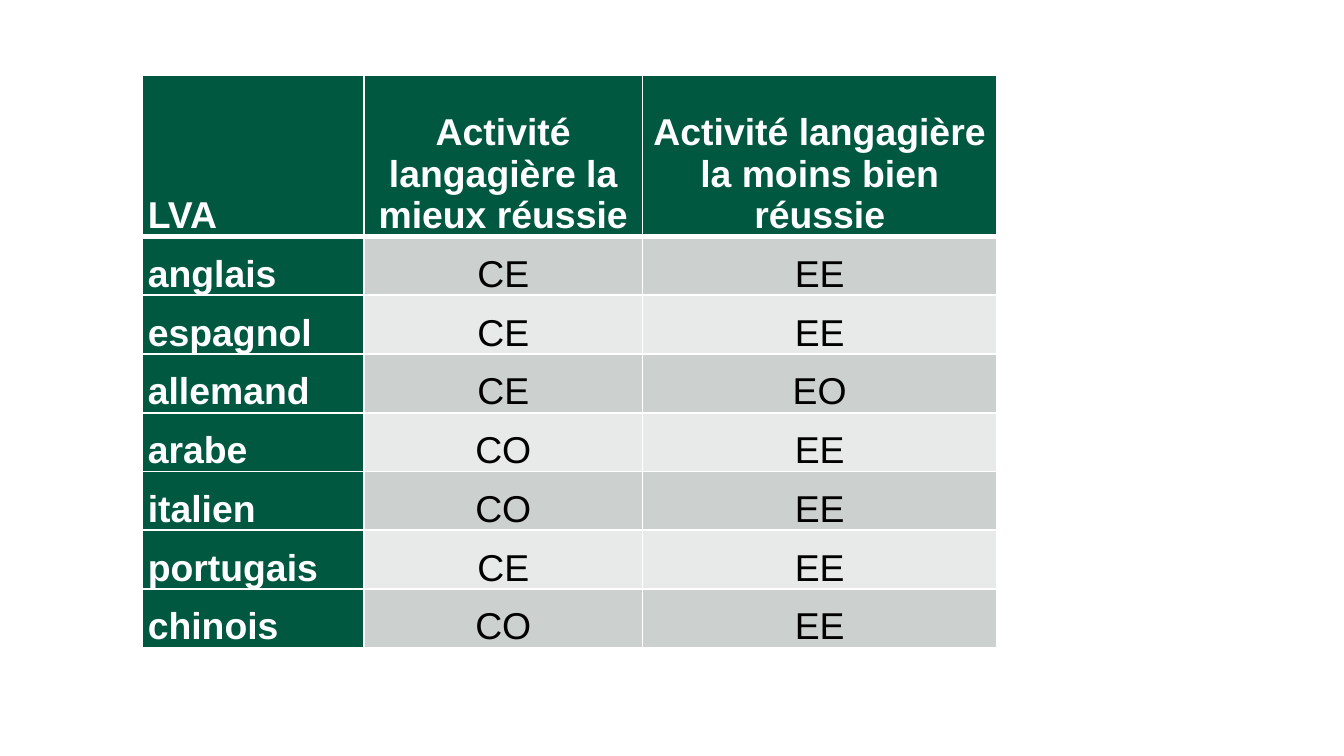
from lxml import etree
from pptx import Presentation
from pptx import util as u
from pptx.dml.color import RGBColor
from pptx.enum import text
from pptx.oxml import ns

HEAD = ["LVA", "Activité langagière la mieux réussie",
        "Activité langagière la moins bien réussie"]
ROWS = [
    ("anglais", "CE", "EE"),
    ("espagnol", "CE", "EE"),
    ("allemand", "CE", "EO"),
    ("arabe", "CO", "EE"),
    ("italien", "CO", "EE"),
    ("portugais", "CE", "EE"),
    ("chinois", "CO", "EE"),
]
WIDTHS = [1.65, 2.07, 2.64]
GREEN, WHITE, BLACK = "005841", "FFFFFF", "000000"
BANDS = ["CCD1CF", "E7EAE9"]


def color(code):
    return RGBColor.from_string(code)


def border(cell, side, width):
    props = cell._tc.get_or_add_tcPr()
    line = etree.SubElement(props, ns.qn(f"a:ln{side}"), w=str(u.Pt(width)))
    fill = etree.SubElement(line, ns.qn("a:solidFill"))
    etree.SubElement(fill, ns.qn("a:srgbClr"), val=WHITE)


def style(cell, row, col):
    label = row == 0 or col == 0
    cell.vertical_anchor = text.MSO_ANCHOR.BOTTOM
    cell.margin_left = cell.margin_right = u.Inches(0.04)
    cell.margin_top = cell.margin_bottom = 0
    for side in "LRTB":
        thick = (row, side) in ((0, "B"), (1, "T"))
        border(cell, side, 3 if thick else 1)
    cell.fill.solid()
    cell.fill.fore_color.rgb = color(GREEN if label else BANDS[(row - 1) % 2])
    para = cell.text_frame.paragraphs[0]
    para.alignment = text.PP_ALIGN.CENTER if col else text.PP_ALIGN.LEFT
    font = para.runs[0].font
    font.name, font.size, font.bold = "Arial", u.Pt(20), label
    font.color.rgb = color(WHITE if label else BLACK)


def results(slide, left, top, width, height, head=1.2):
    data = [HEAD, *ROWS]
    frame = slide.shapes.add_table(
        len(data), len(HEAD), *map(u.Inches, (left, top, width, height)))
    table = frame.table
    for col, part in zip(table.columns, WIDTHS):
        col.width = u.Inches(width * part / sum(WIDTHS))
    for r, line in enumerate(data):
        high = (height - head) / len(ROWS) if r else head
        table.rows[r].height = u.Inches(high)
        for c, word in enumerate(line):
            cell = table.cell(r, c)
            cell.text_frame.text = word
            style(cell, r, c)


def main():
    deck = Presentation()
    deck.slide_width = u.Inches(10)
    deck.slide_height = u.Inches(10 * 9 / 16)
    slide = deck.slides.add_slide(deck.slide_layouts[6])
    results(slide, 1.06, 0.56, 6.36, 4.26)
    deck.save("out.pptx")


if __name__ == "__main__":
    main()
